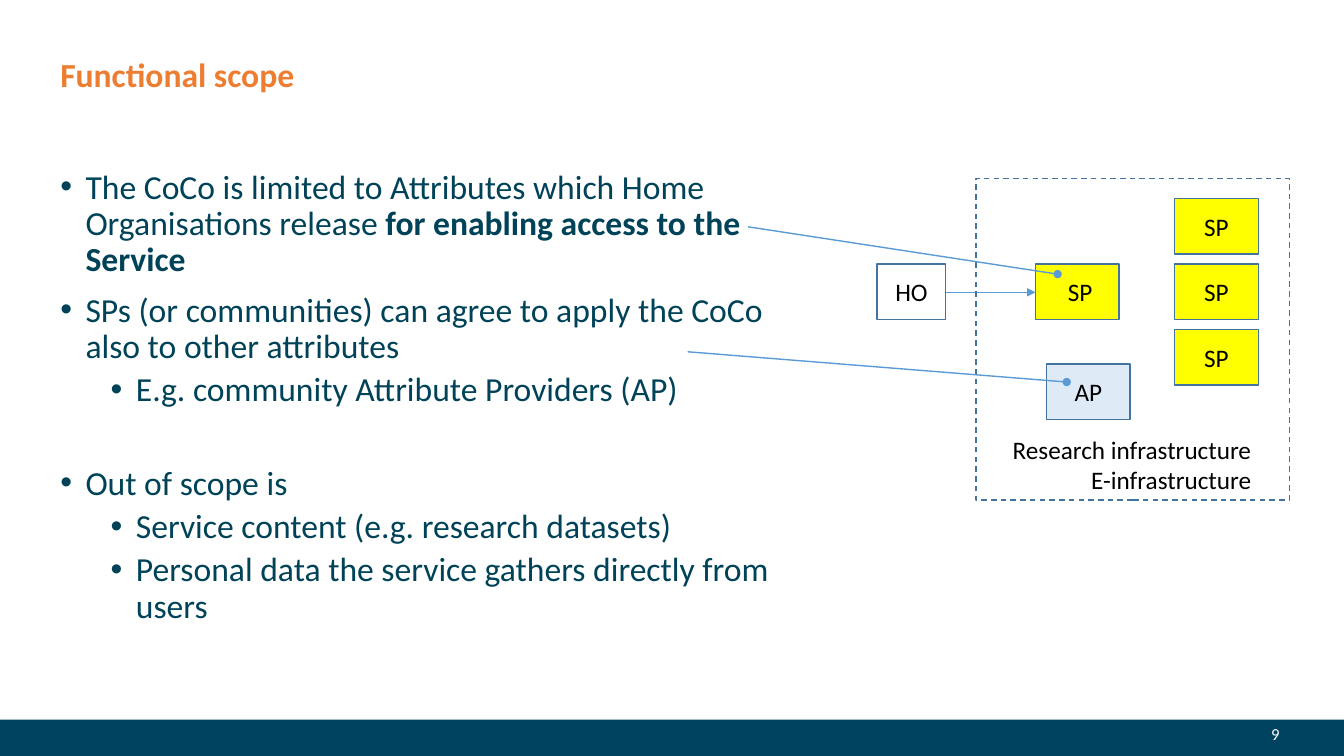
"""Builds the functional scope slide."""
from lxml.etree import SubElement
from pptx import Presentation
from pptx.dml.color import RGBColor
from pptx.enum.dml import MSO_LINE
from pptx.enum.shapes import MSO_CONNECTOR as CONN, MSO_SHAPE as SHAPE
from pptx.enum.text import MSO_ANCHOR as ANCHOR, PP_ALIGN as ALIGN
from pptx.oxml.ns import qn
from pptx.util import Inches, Pt


def rgb(value):
    return RGBColor.from_string(value)


class Slide:
    font, teal, orange = "Calibri", "004359", "ED7D31"
    yellow, outline, arrow = "FFFF00", "43739E", "5B9BD5"

    def __init__(self, prs):
        self.s = prs.slides.add_slide(prs.slide_layouts[6])

    def style(self, p, size, color, bold=False):
        for r in p.runs:
            r.font.name, r.font.size, r.font.bold = self.font, Pt(size), bold
            r.font.color.rgb = rgb(color)

    def text(self, box, text, size, color, bold=False, anchor=ANCHOR.TOP):
        tf = self.s.shapes.add_textbox(*map(Inches, box)).text_frame
        tf.word_wrap, tf.vertical_anchor = True, anchor
        tf.text = text
        self.style(tf.paragraphs[0], size, color, bold)
        return tf

    def bullets(self, box, items, size=24):
        tf = self.s.shapes.add_textbox(*map(Inches, box)).text_frame
        tf.word_wrap = True
        for i, (level, before, text, strong) in enumerate(items):
            p = tf.paragraphs[0] if i == 0 else tf.add_paragraph()
            p.text = text
            p.level, p.line_spacing, p.space_before = level, 0.9, Pt(before)
            pPr = p._p.get_or_add_pPr()
            pPr.set("marL", str(Inches(0.25 + 0.5 * level)))
            pPr.set("indent", str(Inches(-0.25)))
            SubElement(pPr, qn("a:buFont"), typeface="Arial")
            SubElement(pPr, qn("a:buChar"), char="•")
            self.style(p, size, self.teal)
            if strong:
                p.add_run().text = strong
                self.style(p, size, self.teal)
                p.runs[-1].font.bold = True

    def rect(self, box, fill=None, line=None, text="", align=ALIGN.CENTER):
        sp = self.s.shapes.add_shape(SHAPE.RECTANGLE, *map(Inches, box))
        sp.shadow.inherit = False
        if fill:
            sp.fill.solid()
            sp.fill.fore_color.rgb = rgb(fill)
        else:
            sp.fill.background()
        if line:
            sp.line.color.rgb, sp.line.width = rgb(line), Pt(1)
        else:
            sp.line.fill.background()
        tf = sp.text_frame
        tf.text, tf.vertical_anchor = text, ANCHOR.MIDDLE
        for p in tf.paragraphs:
            p.alignment = align
            self.style(p, 18, "000000")
        return sp

    def node(self, x, y, text, fill, width=0.83):
        self.rect((x, y, width, 0.55), fill, self.outline, text)

    def connector(self, start, end, width, head):
        c = self.s.shapes.add_connector(CONN.STRAIGHT, *map(Inches, start + end))
        c.line.color.rgb, c.line.width = rgb(self.arrow), Pt(width)
        SubElement(c.line._get_or_add_ln(), qn("a:tailEnd"), type=head)
        SubElement(c._element.spPr, qn("a:effectLst"))


def main():
    prs = Presentation()
    prs.slide_width, prs.slide_height = Inches(13.33), Inches(7.5)
    s = Slide(prs)
    s.rect((-0.04, 7.14, 13.37, 0.36), "004360")
    s.bullets((0.5, 1.64, 7.66, 4.76), [
        (0, 0, "The CoCo is limited to Attributes which Home Organisations release ",
         "for enabling access to the Service"),
        (0, 10, "SPs (or communities) can agree to apply the CoCo also to other attributes", ""),
        (1, 5, "E.g. community Attribute Providers (AP)", ""),
        (0, 41, "Out of scope is", ""),
        (1, 5, "Service content (e.g. research datasets)", ""),
        (1, 5, "Personal data the service gathers directly from users", ""),
    ])
    s.text((0.5, 0.22, 11.5, 1.03), "Functional scope", 24, s.orange, True, ANCHOR.MIDDLE)
    s.text((12.51, 7.13, 0.62, 0.35), "9", 12, "FFFFFF")

    s.node(8.7, 2.62, "HO", "FFFFFF", 0.68)
    s.node(10.27, 2.62, " SP", s.yellow)
    for i in range(3):
        s.node(11.65, 1.97 + 0.65 * i, "SP", s.yellow)
    s.connector((9.38, 2.9), (10.27, 2.9), 0.5, "triangle")
    s.node(10.38, 3.61, "AP", "DEEBF7")

    infra = s.rect((9.68, 1.77, 3.11, 3.19), None, s.outline,
                   "Research infrastructure\nE-infrastructure", ALIGN.RIGHT)
    infra.line.dash_style = MSO_LINE.DASH
    infra.text_frame.vertical_anchor = ANCHOR.BOTTOM
    infra.text_frame.margin_right = Inches(0.38)
    s.connector((6.82, 3.49), (10.58, 3.79), 1, "oval")
    s.connector((7.42, 2.25), (10.49, 2.72), 1, "oval")
    prs.save("out.pptx")


if __name__ == "__main__":
    main()
